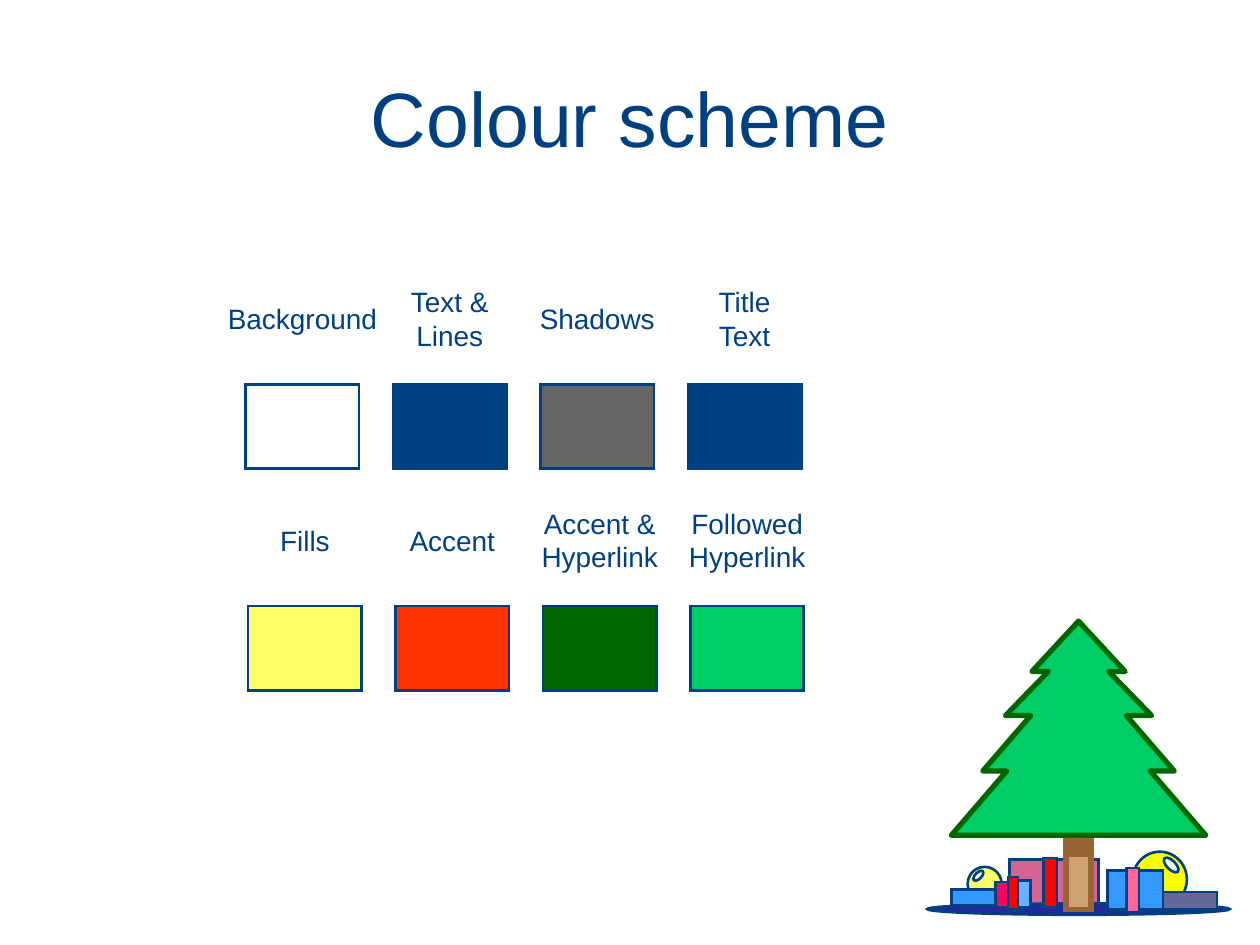
"""Build the colour scheme slide with its swatches and tree scene."""
from dataclasses import dataclass

from lxml import etree
from pptx import Presentation
from pptx.dml.color import RGBColor
from pptx.enum import shapes, text
from pptx.oxml.ns import qn
from pptx.util import Inches, Pt

COLOURS = {
    "navy": "004080", "white": "FFFFFF", "grey": "666666", "yellow": "FFFF66",
    "orange": "FF3300", "dark green": "006600", "green": "00CD65",
    "rose": "D36494", "indigo": "1E2A9E", "lemon": "FFFD04", "tan": "D0A172",
    "brown": "996633", "sky": "66B2FE", "scarlet": "FE0000", "slate": "666699",
    "blue": "3499FE", "pink": "FF6699", "magenta": "FF0161", "red": "FF0000",
}
RECT = shapes.MSO_SHAPE.RECTANGLE
OVAL = shapes.MSO_SHAPE.OVAL
SWATCH_W, SWATCH_H, PITCH = 0.9, 0.67, 1.17
LABEL_RISE = 0.52


@dataclass
class Part:
    kind: shapes.MSO_SHAPE
    x: float
    y: float
    w: float
    h: float
    fill: str
    line: str = "navy"
    weight: float = 1.5
    rotation: float = 0


@dataclass
class Swatch:
    label: list[str]
    label_w: float
    fill: str
    soft_break: bool = False


BEHIND_TREE = [
    Part(OVAL, 7.68, 6.88, 0.27, 0.27, "yellow"),
    Part(RECT, 8.01, 6.82, 0.71, 0.38, "rose"),
    Part(OVAL, 7.36, 7.17, 2.4, 0.09, "indigo"),
    Part(OVAL, 8.99, 6.76, 0.43, 0.44, "lemon"),
    Part(RECT, 8.46, 6.64, 0.2, 0.58, "tan", "brown", 3),
    Part(RECT, 8.07, 6.99, 0.11, 0.21, "sky"),
    Part(RECT, 8.28, 6.81, 0.11, 0.39, "scarlet"),
    Part(RECT, 9.17, 7.08, 0.49, 0.14, "slate"),
    Part(RECT, 8.79, 6.91, 0.44, 0.31, "blue"),
    Part(RECT, 8.94, 6.89, 0.1, 0.35, "pink"),
    Part(RECT, 7.55, 7.06, 0.36, 0.13, "blue"),
    Part(RECT, 8.46, 6.62, 0.2, 0.16, "brown", "brown", 3),
]
BEFORE_TREE = [
    Part(RECT, 7.9, 7, 0.1, 0.2, "magenta"),
    Part(OVAL, 9.26, 6.79, 0.07, 0.15, "white", rotation=315),
    Part(OVAL, 7.74, 6.9, 0.05, 0.1, "white", rotation=225),
    Part(RECT, 8, 6.96, 0.08, 0.26, "red"),
]
TREE_X, TREE_TOP = 8.56, 4.93
TREE_EDGE = [(0.37, 5.33), (0.24, 5.33), (0.58, 5.68), (0.38, 5.68),
             (0.76, 6.12), (0.57, 6.12), (1.01, 6.63)]
ROWS = [
    (1.95, 3.05, [
        Swatch(["Background"], 1.39, "white"),
        Swatch(["Text &", "Lines"], 0.84, "navy"),
        Swatch(["Shadows"], 1.11, "grey"),
        Swatch(["Title", "Text"], 0.63, "navy", soft_break=True),
    ]),
    (1.97, 4.81, [
        Swatch(["Fills"], 0.59, "yellow"),
        Swatch(["Accent"], 0.88, "orange"),
        Swatch(["Accent &", "Hyperlink"], 1.12, "dark green"),
        Swatch(["Followed", "Hyperlink"], 1.12, "green"),
    ]),
]


def rgb(name: str) -> RGBColor:
    return RGBColor.from_string(COLOURS[name])


def paint(sp, fill: str, line: str, weight: float, join: str = "miter") -> None:
    sp.shadow.inherit = False
    sp.fill.solid()
    sp.fill.fore_color.rgb = rgb(fill)
    sp.line.color.rgb = rgb(line)
    sp.line.width = Pt(weight)
    etree.SubElement(sp.line._get_or_add_ln(), qn(f"a:{join}"))


def draw_part(s, part: Part) -> None:
    sp = s.shapes.add_shape(part.kind, Inches(part.x), Inches(part.y),
                            Inches(part.w), Inches(part.h))
    sp.rotation = part.rotation
    paint(sp, part.fill, part.line, part.weight)


def draw_tree(s) -> None:
    left = [(Inches(TREE_X - dx), Inches(y)) for dx, y in TREE_EDGE]
    right = [(Inches(TREE_X + dx), Inches(y)) for dx, y in reversed(TREE_EDGE)]
    builder = s.shapes.build_freeform(Inches(TREE_X), Inches(TREE_TOP))
    builder.add_line_segments(left + right, close=True)
    paint(builder.convert_to_shape(), "green", "dark green", 3, "round")


def add_run(p, words: str, size: float) -> None:
    r = p.add_run()
    r.text = words
    r.font.name = "Arial"
    r.font.size = Pt(size)
    r.font.color.rgb = rgb("navy")


def draw_label(s, swatch: Swatch, centre: float, middle: float) -> None:
    h = 0.1 + 0.27 * len(swatch.label)
    box = s.shapes.add_textbox(Inches(centre - swatch.label_w / 2), Inches(middle - h / 2),
                               Inches(swatch.label_w), Inches(h))
    tf = box.text_frame
    tf.word_wrap = False
    tf.margin_left = tf.margin_right = Inches(0.05)
    p = tf.paragraphs[0]
    for i, words in enumerate(swatch.label):
        if i and swatch.soft_break:
            p.add_line_break()
        elif i:
            p = tf.add_paragraph()
        p.alignment = text.PP_ALIGN.CENTER
        add_run(p, words, 16)


def draw_title(s, words: str) -> None:
    title = s.shapes.title
    title.left, title.top = Inches(0.5), Inches(0.3)
    title.width, title.height = Inches(9), Inches(1.25)
    tf = title.text_frame
    tf.vertical_anchor = text.MSO_ANCHOR.MIDDLE
    p = tf.paragraphs[0]
    p.alignment = text.PP_ALIGN.CENTER
    add_run(p, words, 44)


def main() -> None:
    prs = Presentation()
    prs.slide_width, prs.slide_height = Inches(10), Inches(7.5)
    s = prs.slides.add_slide(prs.slide_layouts[5])
    for part in BEHIND_TREE:
        draw_part(s, part)
    draw_tree(s)
    for part in BEFORE_TREE:
        draw_part(s, part)
    draw_title(s, "Colour scheme")
    for left, top, swatches in ROWS:
        for i, swatch in enumerate(swatches):
            x = left + i * PITCH
            draw_part(s, Part(RECT, x, top, SWATCH_W, SWATCH_H, swatch.fill))
            draw_label(s, swatch, x + SWATCH_W / 2, top - LABEL_RISE)
    prs.save("out.pptx")


if __name__ == "__main__":
    main()
